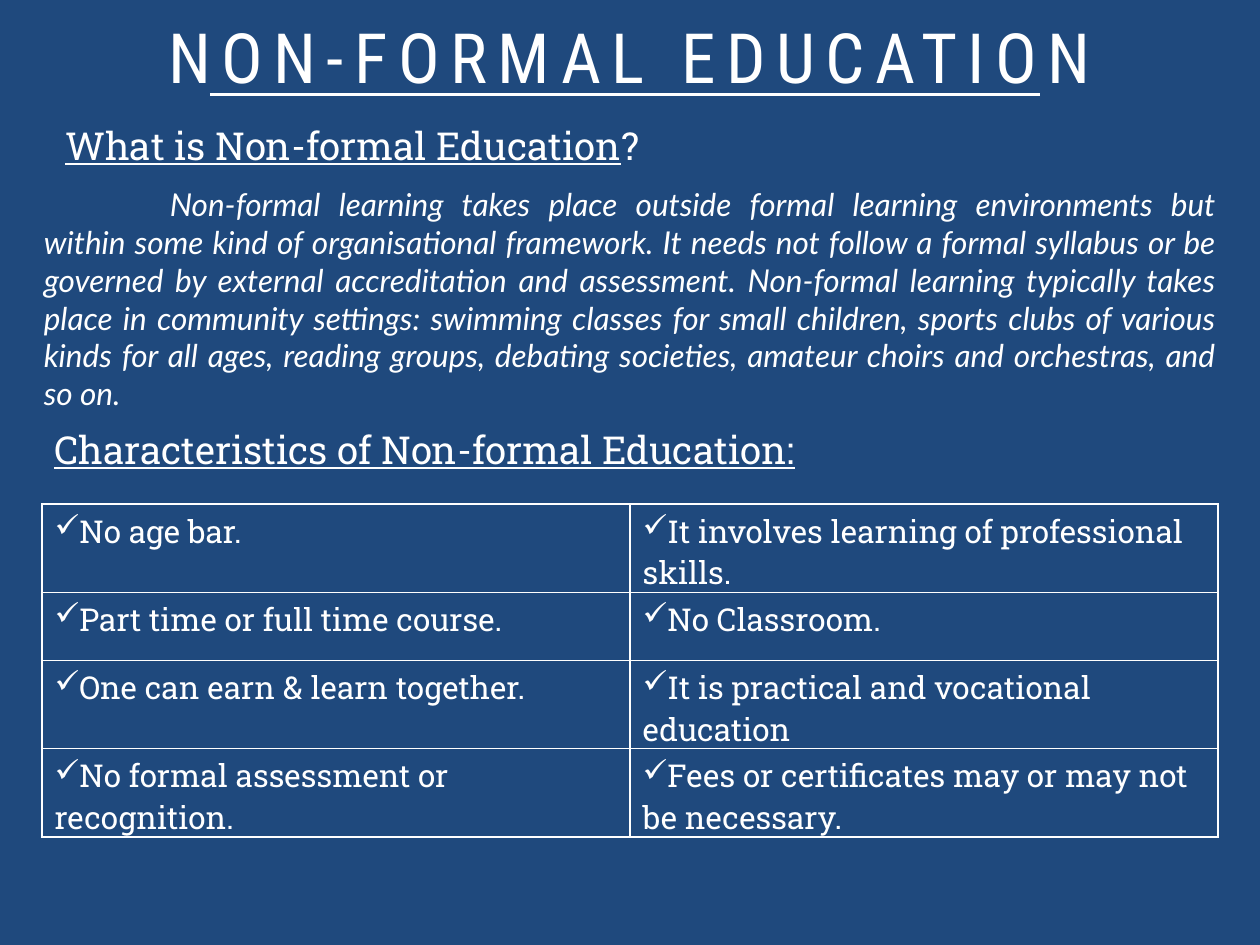
from lxml import etree
from pptx import Presentation
from pptx.dml.color import RGBColor
from pptx.enum.shapes import MSO_CONNECTOR as CONN
from pptx.enum.text import MSO_ANCHOR as ANCHOR, MSO_AUTO_SIZE as FIT, PP_ALIGN as ALIGN
from pptx.oxml.ns import qn
from pptx.util import Inches, Pt

NAVY = RGBColor(0x1F, 0x49, 0x7D)
WHITE = RGBColor(0xFF, 0xFF, 0xFF)
SLAB = "Roboto Slab"
W, H = 10, 7.5

DEFINITION = (
    "Non-formal learning takes place outside formal learning environments but "
    "within some kind of organisational framework. It needs not follow a formal "
    "syllabus or be governed by external accreditation and assessment. Non-formal "
    "learning typically takes place in community settings: swimming classes for "
    "small children, sports clubs of various kinds for all ages, reading groups, "
    "debating societies, amateur choirs and orchestras, and so on."
)
TRAITS = [
    ("No age bar.", "It involves learning of professional skills."),
    ("Part time or full time course.", "No Classroom."),
    ("One can earn & learn together.", "It is practical and vocational education"),
    ("No formal assessment or recognition.",
     "Fees or certificates may or may not be necessary."),
]


def add_run(p, text, size, font, underline=None, italic=None):
    r = p.add_run()
    r.text = text
    r.font.size, r.font.name = Pt(size), font
    r.font.underline, r.font.italic = underline, italic
    r.font.color.rgb = WHITE
    return r


def add_title(slide, box, text):
    sp = slide.shapes.title
    sp.left, sp.top, sp.width, sp.height = map(Inches, box)
    tf = sp.text_frame
    tf.auto_size, tf.vertical_anchor = FIT.NONE, ANCHOR.MIDDLE
    p = tf.paragraphs[0]
    p.alignment, p.line_spacing = ALIGN.CENTER, 0.8
    r = add_run(p, text, 39.6, "Roboto Condensed")
    r.font._element.set("spc", "600")

    left, top, width, height = box
    y = Inches(H / 10)
    rule = slide.shapes.add_connector(
        CONN.STRAIGHT, Inches(left + width / 6), y, Inches(left + width * 0.825), y)
    rule.line.color.rgb, rule.line.width = WHITE, Pt(2.25)
    etree.SubElement(rule._element.spPr, qn("a:effectLst"))


def add_text(slide, box, wrap):
    tf = slide.shapes.add_textbox(*map(Inches, box)).text_frame
    tf.word_wrap, tf.auto_size = wrap, FIT.SHAPE_TO_FIT_TEXT
    return tf.paragraphs[0]


def add_heading(slide, box, text, tail=""):
    p = add_text(slide, box, False)
    add_run(p, text, 22, SLAB, underline=True)
    if tail:
        add_run(p, tail, 22, SLAB, underline=False)


def add_body(slide, box, text):
    p = add_text(slide, box, True)
    p.alignment = ALIGN.JUSTIFY
    p._p.get_or_add_pPr().set("indent", str(Inches(1)))
    add_run(p, text, 18, "Lato", italic=True)


def outline_cell(cell):
    cell.fill.background()
    tcPr = cell._tc.get_or_add_tcPr()
    for i, side in enumerate(("lnL", "lnR", "lnT", "lnB")):
        ln = etree.Element(qn(f"a:{side}"), w=str(Pt(1)))
        fill = etree.SubElement(ln, qn("a:solidFill"))
        etree.SubElement(fill, qn("a:srgbClr"), val=str(WHITE))
        tcPr.insert(i, ln)


def add_traits(slide, box, rows):
    table = slide.shapes.add_table(len(rows), len(rows[0]), *map(Inches, box)).table
    table.first_row = table.horz_banding = False
    for i, row in enumerate(rows):
        for j, text in enumerate(row):
            cell = table.cell(i, j)
            outline_cell(cell)
            p = cell.text_frame.paragraphs[0]
            etree.SubElement(p._p.get_or_add_pPr(), qn("a:buChar"), char="✓")
            add_run(p, text, 18, SLAB)


def main():
    prs = Presentation()
    prs.slide_width, prs.slide_height = Inches(W), Inches(H)
    slide = prs.slides.add_slide(prs.slide_layouts[5])
    slide.background.fill.solid()
    slide.background.fill.fore_color.rgb = NAVY

    margin = W / 30
    add_title(slide, (0, 0.17, W, 0.67), "NON-FORMAL EDUCATION")
    add_heading(slide, (0.42, 0.92, 4.96, 0.47), "What is Non-formal Education", "?")
    add_body(slide, (0.25, 1.42, W - 0.5, 1.92), DEFINITION)
    add_heading(slide, (margin, 3.33, 6.4, 0.47),
                "Characteristics of Non-formal Education:")
    add_traits(slide, (margin, 4, W - 2 * margin, 0.54 * len(TRAITS)), TRAITS)
    prs.save("out.pptx")


if __name__ == "__main__":
    main()
